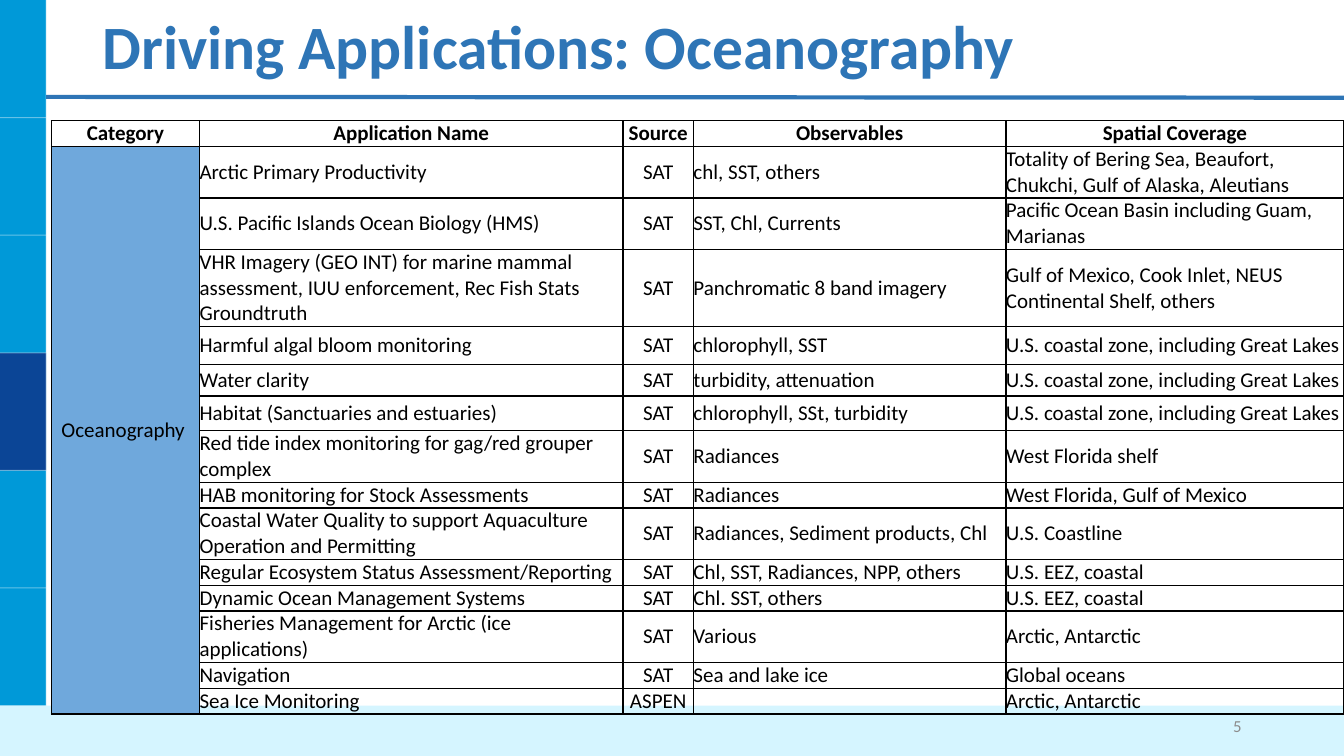
import pptx
import pptx.dml.color
import pptx.enum.shapes
import pptx.enum.text
import pptx.oxml.ns
import pptx.util
from dataclasses import dataclass
from lxml import etree

Pt = pptx.util.Pt
RGB = pptx.dml.color.RGBColor.from_string
ALIGN = pptx.enum.text.PP_ALIGN
ANCHOR = pptx.enum.text.MSO_ANCHOR
SHAPE = pptx.enum.shapes.MSO_SHAPE
qn = pptx.oxml.ns.qn


@dataclass(frozen=True)
class Theme:
    """Colours, font and type sizes of the slide."""
    font: str = "Calibri"
    title: str = "2E75B6"
    bar: str = "0099D8"
    accent: str = "0B4596"
    footer: str = "D5F5FF"
    category: str = "6FA8DC"
    ink: str = "000000"
    muted: str = "8C8C8C"
    white: str = "FFFFFF"
    title_size: float = 44
    table_size: float = 15
    number_size: float = 12


THEME = Theme()
WIDTH, HEIGHT = 960, 540
SIDEBAR_WIDTH = 33
FOOTER_TOP = 504
LINE_HEIGHT = 18.4

HEADERS = ["Category", "Application Name", "Source", "Observables", "Spatial Coverage"]
COLUMN_WIDTHS = [105.9, 302.4, 50.4, 223.2, 241.3]
CENTRED_COLUMN = 2
COASTAL = "U.S. coastal zone, including Great Lakes"
ROWS = [
    (36.8, "Arctic Primary Productivity", "SAT", "chl, SST, others",
     "Totality of Bering Sea, Beaufort, Chukchi, Gulf of Alaska, Aleutians"),
    (36.8, "U.S. Pacific Islands Ocean Biology (HMS)", "SAT", "SST, Chl, Currents",
     "Pacific Ocean Basin including Guam, Marianas"),
    (55.2, "VHR Imagery (GEO INT) for marine mammal assessment, IUU enforcement, "
     "Rec Fish Stats Groundtruth", "SAT", "Panchromatic 8 band imagery",
     "Gulf of Mexico, Cook Inlet, NEUS Continental Shelf, others"),
    (27.2, "Harmful algal bloom monitoring", "SAT", "chlorophyll, SST", COASTAL),
    (22.3, "Water clarity", "SAT", "turbidity, attenuation", COASTAL),
    (24.8, "Habitat (Sanctuaries and estuaries)", "SAT", "chlorophyll, SSt, turbidity", COASTAL),
    (36.8, "Red tide index monitoring for gag/red grouper complex", "SAT", "Radiances",
     "West Florida shelf"),
    (LINE_HEIGHT, "HAB monitoring for Stock Assessments", "SAT", "Radiances",
     "West Florida, Gulf of Mexico"),
    (36.8, "Coastal Water Quality to support Aquaculture Operation and Permitting", "SAT",
     "Radiances, Sediment products, Chl", "U.S. Coastline"),
    (LINE_HEIGHT, "Regular Ecosystem Status Assessment/Reporting", "SAT",
     "Chl, SST, Radiances, NPP, others", "U.S. EEZ, coastal"),
    (LINE_HEIGHT, "Dynamic Ocean Management Systems", "SAT", "Chl. SST, others",
     "U.S. EEZ, coastal"),
    (36.8, "Fisheries Management for Arctic (ice applications)", "SAT", "Various",
     "Arctic, Antarctic"),
    (LINE_HEIGHT, "Navigation", "SAT", "Sea and lake ice", "Global oceans"),
    (LINE_HEIGHT, "Sea Ice Monitoring", "ASPEN", "", "Arctic, Antarctic"),
]


def set_attributes(target, values):
    """Set each named attribute of an object."""
    for name, value in values.items():
        setattr(target, name, value)


def write_text(tf, text, size, color, bold=False, **paragraph):
    """Write one formatted paragraph into a text frame."""
    p = tf.paragraphs[0]
    set_attributes(p, paragraph)
    if not text:
        etree.SubElement(p._p, qn("a:endParaRPr"), sz=str(int(size * 100)))
        return
    r = p.add_run()
    r.text = text
    set_attributes(r.font, {"name": THEME.font, "size": Pt(size), "bold": bold})
    r.font.color.rgb = RGB(color)


def add_block(slide, left, top, width, height, color):
    """Add a plain filled rectangle."""
    sp = slide.shapes.add_shape(SHAPE.RECTANGLE, Pt(left), Pt(top), Pt(width), Pt(height))
    sp.shadow.inherit = False
    sp.fill.solid()
    sp.fill.fore_color.rgb = RGB(color)
    sp.line.fill.background()


def add_line(slide, start, end, color, weight, opacity=100):
    """Add a straight line between two points."""
    line = slide.shapes.add_connector(pptx.enum.shapes.MSO_CONNECTOR.STRAIGHT,
                                      *map(Pt, (*start, *end)))
    line.line.color.rgb = RGB(color)
    line.line.width = Pt(weight)
    etree.SubElement(line._element.spPr, qn("a:effectLst"))
    if opacity < 100:
        rgb = line._element.spPr.find(".//" + qn("a:srgbClr"))
        etree.SubElement(rgb, qn("a:alpha"), val=str(opacity * 1000))


def add_sidebar(slide, left, top, width, height):
    """Add the segmented bar with its fourth segment highlighted."""
    step = (FOOTER_TOP - top) / 6
    add_block(slide, left, top, width, height, THEME.bar)
    add_block(slide, left, top + 3 * step, width, step, THEME.accent)
    right = left + width
    edges = [((left, top + i * step), (right, top + i * step)) for i in range(1, 7)]
    for start, end in edges + [((right, top), (right, top + height))]:
        add_line(slide, start, end, THEME.white, 0.75, 40)


def add_title(slide, left, top, width, height, text):
    """Place the title and the rule beneath it."""
    add_line(slide, (SIDEBAR_WIDTH, top + 66.3), (WIDTH, top + 66.9), THEME.title, 3)
    sp = slide.shapes.title
    set_attributes(sp, {"left": Pt(left), "top": Pt(top),
                        "width": Pt(width), "height": Pt(height)})
    tf = sp.text_frame
    set_attributes(tf, {"vertical_anchor": ANCHOR.MIDDLE, "word_wrap": True,
                        "auto_size": pptx.enum.text.MSO_AUTO_SIZE.NONE})
    write_text(tf, text, THEME.title_size, THEME.title, True,
               alignment=ALIGN.LEFT, line_spacing=0.9)


def add_footer(slide, left, top, width, height, number):
    """Add the footer band and the slide number."""
    add_block(slide, left, top, width, height, THEME.footer)
    s = slide.shapes.add_textbox(Pt(left + 678), Pt(top), Pt(216), Pt(28.75))
    set_attributes(s.text_frame, {"word_wrap": True, "vertical_anchor": ANCHOR.MIDDLE})
    write_text(s.text_frame, number, THEME.number_size, THEME.muted, alignment=ALIGN.RIGHT)


def format_cell(cell, text, bold=False, centred=False, fill=None, margins=(0, 0)):
    """Write a table cell with its borders and fill."""
    side, end = map(Pt, margins)
    set_attributes(cell, {"margin_left": side, "margin_right": side, "margin_top": end,
                          "margin_bottom": end, "vertical_anchor": ANCHOR.MIDDLE})
    write_text(cell.text_frame, text, THEME.table_size, THEME.ink, bold,
               alignment=ALIGN.CENTER if centred else ALIGN.LEFT)
    tcPr = cell._tc.get_or_add_tcPr()
    for edge in ("lnL", "lnR", "lnT", "lnB"):
        ln = etree.SubElement(tcPr, qn("a:" + edge), w=str(Pt(1)))
        solid = etree.SubElement(ln, qn("a:solidFill"))
        etree.SubElement(solid, qn("a:srgbClr"), val=THEME.ink)
    if fill:
        cell.fill.solid()
        cell.fill.fore_color.rgb = RGB(fill)
    else:
        cell.fill.background()


def add_applications(slide, left, top, width, height):
    """Add the table of applications under one merged category."""
    frame = slide.shapes.add_table(len(ROWS) + 1, len(HEADERS),
                                   Pt(left), Pt(top), Pt(width), Pt(height))
    table = frame.table
    set_attributes(table, {"first_row": False, "horz_banding": False})
    for column, column_width in zip(table.columns, COLUMN_WIDTHS):
        column.width = Pt(column_width)
    table.rows[0].height = Pt(LINE_HEIGHT)
    for c, header in enumerate(HEADERS):
        format_cell(table.cell(0, c), header, bold=True, centred=True)
    for r, (row_height, *values) in enumerate(ROWS, 1):
        table.rows[r].height = Pt(row_height)
        format_cell(table.cell(r, 0), "Oceanography" if r == 1 else "",
                    fill=THEME.category, margins=(7.2, 3.6) if r == 1 else (0, 0))
        for c, value in enumerate(values, 1):
            format_cell(table.cell(r, c), value, centred=c == CENTRED_COLUMN)
    table.cell(1, 0).merge(table.cell(len(ROWS), 0))


def main():
    """Build and save the slide."""
    prs = pptx.Presentation()
    set_attributes(prs, {"slide_width": Pt(WIDTH), "slide_height": Pt(HEIGHT)})
    slide = prs.slides.add_slide(prs.slide_layouts[5])
    add_sidebar(slide, 0, 0, SIDEBAR_WIDTH, HEIGHT)
    add_footer(slide, 0, FOOTER_TOP, WIDTH, HEIGHT - FOOTER_TOP, "5")
    add_title(slide, 66, 2.9, 828, 65.5, "Driving Applications: Oceanography")
    add_applications(slide, 36.7, 86.2, sum(COLUMN_WIDTHS),
                     LINE_HEIGHT + sum(row[0] for row in ROWS))
    prs.save("out.pptx")


if __name__ == "__main__":
    main()
